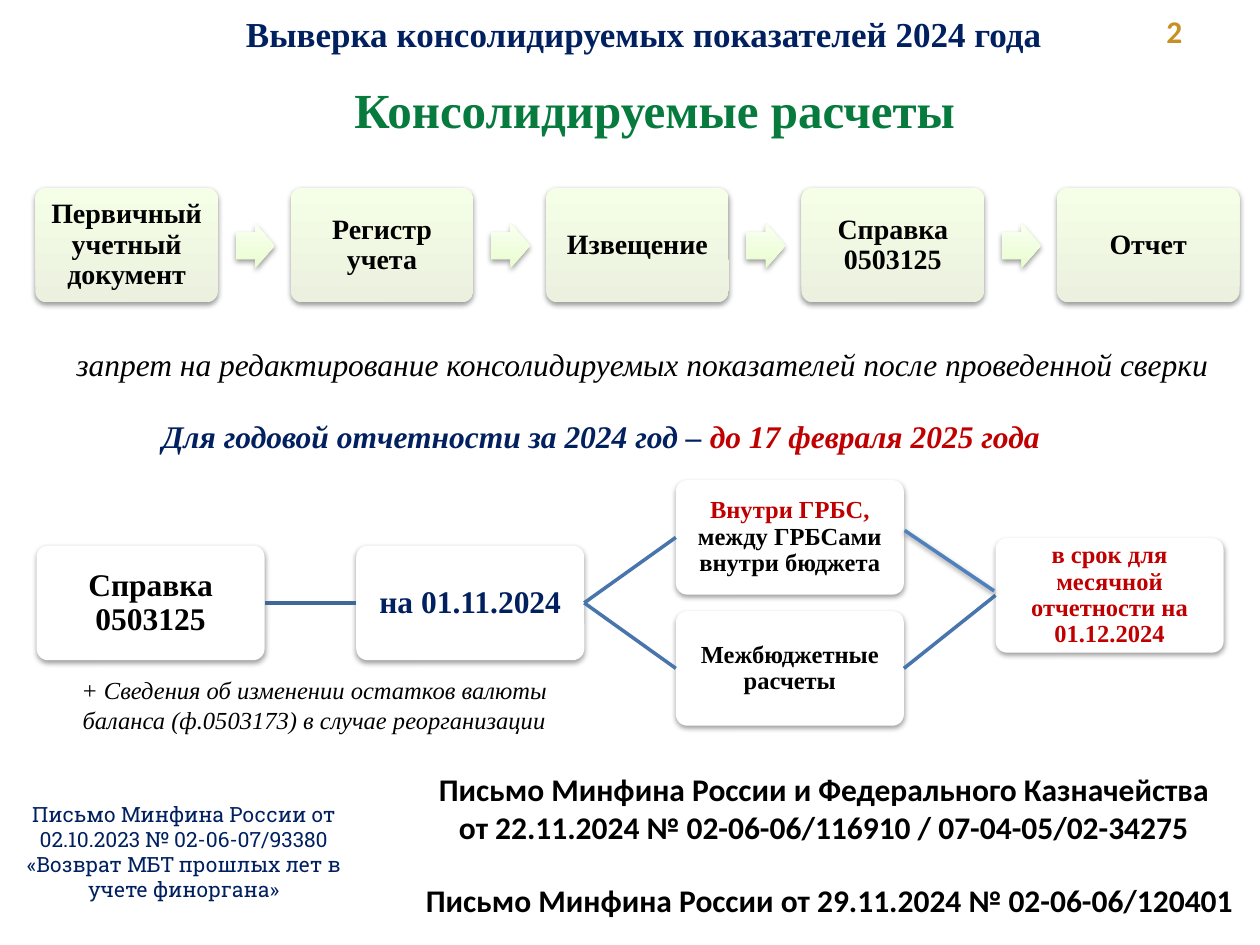
from dataclasses import dataclass

from lxml.etree import SubElement
from pptx import Presentation
from pptx.dml.color import RGBColor
from pptx.enum.shapes import MSO_CONNECTOR, MSO_SHAPE
from pptx.enum.text import MSO_ANCHOR, MSO_AUTO_SIZE, PP_ALIGN
from pptx.oxml.ns import qn
from pptx.util import Inches, Pt

COLS, ROWS = 100, 75
WIDTH, HEIGHT = Inches(10), Inches(7.5)
SERIF, SANS, SLAB = "Times New Roman", "Calibri", "Roboto Slab"
COLORS = {
    "black": "000000", "white": "FFFFFF", "navy": "002060", "red": "C00000",
    "green": "077A3E", "gold": "C79023",
    "step_low": "EBF1DE", "step_high": "F5FFE7",
    "arrow_low": "E9FDCF", "arrow_high": "F9FFF1",
    "link_dark": "3F6797", "link": "4875AC", "link_light": "4F81BD",
}


@dataclass(frozen=True)
class Run:
    text: str
    size: float
    color: str = "black"
    bold: bool = True
    italic: bool = False
    font: str = SERIF


@dataclass(frozen=True)
class Box:
    """A place in columns and rows of the slide grid."""
    x: float
    y: float
    w: float
    h: float

    @property
    def left_mid(self) -> tuple[float, float]:
        return self.x, self.y + self.h / 2

    @property
    def right_mid(self) -> tuple[float, float]:
        return self.x + self.w, self.y + self.h / 2


@dataclass(frozen=True)
class Caption:
    box: Box
    runs: tuple[Run, ...]
    align: PP_ALIGN = PP_ALIGN.CENTER


@dataclass(frozen=True)
class Link:
    start: tuple[float, float]
    end: tuple[float, float]
    color: str = "link"
    shadow: bool = False


def col(n: float) -> int:
    return round(WIDTH * n / COLS)


def row(n: float) -> int:
    return round(HEIGHT * n / ROWS)


def place(box: Box) -> tuple[int, int, int, int]:
    return col(box.x), row(box.y), col(box.w), row(box.h)


def rgb(name: str) -> RGBColor:
    return RGBColor.from_string(COLORS[name])


def write(tf, runs: tuple[Run, ...], align: PP_ALIGN = PP_ALIGN.CENTER):
    tf.word_wrap = True
    p = tf.paragraphs[0]
    p.alignment = align
    for item in runs:
        r = p.add_run()
        r.text = item.text
        f = r.font
        f.name, f.size, f.bold, f.italic = item.font, Pt(item.size), item.bold, item.italic
        f.color.rgb = rgb(item.color)
    return p


def add_effects(sp, shadow: bool) -> None:
    """Replace the theme effect by a soft shadow below, or by none."""
    effects = SubElement(sp._element.spPr, qn("a:effectLst"))
    if shadow:
        outer = SubElement(effects, qn("a:outerShdw"), blurRad="40000", dist="20000",
                           dir="5400000", rotWithShape="0")
        color = SubElement(outer, qn("a:srgbClr"), val=COLORS["black"])
        SubElement(color, qn("a:alpha"), val="38000")


def add_block(s, kind: MSO_SHAPE, box: Box, adjustments: tuple[float, ...],
              fill: tuple[str, ...]):
    """Add a shadowed shape; two fill colours make a gradient from bottom to top."""
    sp = s.shapes.add_shape(kind, *place(box))
    for i, value in enumerate(adjustments):
        sp.adjustments[i] = value
    if len(fill) == 1:
        sp.fill.solid()
        sp.fill.fore_color.rgb = rgb(fill[0])
    else:
        sp.fill.gradient()
        sp.fill.gradient_angle = 90
        for stop, name in zip(sp.fill.gradient_stops, fill):
            stop.color.rgb = rgb(name)
    sp.line.fill.background()
    add_effects(sp, True)
    return sp


def add_card(s, box: Box, runs: tuple[Run, ...], fill: tuple[str, ...], inset: float) -> None:
    tf = add_block(s, MSO_SHAPE.ROUNDED_RECTANGLE, box, (0.1,), fill).text_frame
    tf.margin_left = tf.margin_right = col(inset)
    tf.margin_top = tf.margin_bottom = row(inset)
    tf.vertical_anchor = MSO_ANCHOR.MIDDLE
    write(tf, runs).line_spacing = 0.9


def add_caption(s, caption: Caption) -> None:
    tf = s.shapes.add_textbox(*place(caption.box)).text_frame
    write(tf, caption.runs, caption.align)


def add_link(s, link: Link) -> None:
    (x1, y1), (x2, y2) = link.start, link.end
    line = s.shapes.add_connector(MSO_CONNECTOR.STRAIGHT, col(x1), row(y1), col(x2), row(y2))
    line.line.color.rgb = rgb(link.color)
    line.line.width = Pt(2)
    add_effects(line, link.shadow)


def set_title(s, box: Box, run: Run) -> None:
    title = s.shapes.title
    title.left, title.top, title.width, title.height = place(box)
    tf = title.text_frame
    tf.auto_size = MSO_AUTO_SIZE.NONE
    tf.vertical_anchor = MSO_ANCHOR.TOP
    write(tf, (run,))


STEPS = ("Первичный учетный документ", "Регистр учета", "Извещение", "Справка 0503125", "Отчет")
STEP_PITCH = 20.27


def add_steps(s) -> None:
    for i, text in enumerate(STEPS):
        x = 2.8 + i * STEP_PITCH
        add_card(s, Box(x, 14.9, 14.5, 9.1), (Run(text, 16),), ("step_low", "step_high"), 1)
        if i < len(STEPS) - 1:
            add_block(s, MSO_SHAPE.RIGHT_ARROW, Box(x + 15.9, 17.7, 3.1, 3.6), (0.6, 0.5),
                      ("arrow_low", "arrow_high"))


def tree_box(level: int, y: float) -> Box:
    return Box(2.9 + 25.37 * level, y, 18.1, 9.1)


FORM, DATE = tree_box(0, 43.3), tree_box(1, 43.3)
INSIDE, BETWEEN, DEADLINE = tree_box(2, 38.1), tree_box(2, 48.5), tree_box(3, 42.7)
TREE = (
    (FORM, (Run("Справка 0503125", 18),)),
    (DATE, (Run("на 01.11.2024", 18, "navy"),)),
    (INSIDE, (Run("Внутри ГРБС, ", 14, "red"), Run("между ГРБСами внутри бюджета", 14))),
    (BETWEEN, (Run("Межбюджетные расчеты", 14),)),
    (DEADLINE, (Run("в срок для месячной отчетности на 01.12.2024", 14, "red"),)),
)
LINKS = (
    Link(FORM.right_mid, DATE.left_mid, "link_dark"),
    Link(DATE.right_mid, INSIDE.left_mid),
    Link(DATE.right_mid, BETWEEN.left_mid),
    Link(BETWEEN.right_mid, DEADLINE.left_mid),
    Link((78.9, 46.9), (71.8, 42.1), "link_light", True),
)
CAPTIONS = (
    Caption(Box(91.6, 0.5, 6.6, 4), (Run("2", 18, "gold", font=SANS),), PP_ALIGN.LEFT),
    Caption(Box(22, 5.8, 59.9, 5.7), (Run("Консолидируемые расчеты", 28, "green"),)),
    Caption(Box(3.8, 26.9, 94.4, 4), (
        Run("запрет на редактирование консолидируемых показателей после проведенной сверки",
            18, bold=False, italic=True),)),
    Caption(Box(9, 32.6, 77.4, 4), (
        Run("Для годовой отчетности за 2024 год – ", 18, "navy", italic=True),
        Run("до 17 февраля 2025 года", 18, "red", italic=True))),
    Caption(Box(3.8, 53.1, 42.3, 5.7), (
        Run("+ Сведения об изменении остатков валюты баланса (ф.0503173) в случае реорганизации",
            14, bold=False, italic=True),)),
    Caption(Box(33.5, 60.6, 63.8, 7.1), (
        Run("Письмо Минфина России и Федерального Казначейства "
            "от 22.11.2024 № 02-06-06/116910 / 07-04-05/02-34275", 18, font=SANS),)),
    Caption(Box(32.3, 69.4, 67.1, 4), (
        Run("Письмо Минфина России от 29.11.2024 № 02-06-06/120401", 18, font=SANS),)),
    Caption(Box(0.8, 63.1, 27.6, 11.1), (
        Run("Письмо Минфина России от 02.10.2023 № 02-06-07/93380 "
            "«Возврат МБТ прошлых лет в учете финоргана»", 12, "navy", False, font=SLAB),)),
)


def main() -> None:
    prs = Presentation()
    prs.slide_width, prs.slide_height = WIDTH, HEIGHT
    s = prs.slides.add_slide(prs.slide_layouts[5])
    set_title(s, Box(16.6, 0.5, 69, 4.4),
              Run("Выверка консолидируемых показателей 2024 года", 20, "navy"))
    add_steps(s)
    for box, runs in TREE:
        add_card(s, box, runs, ("white",), 0.4)
    for link in LINKS:
        add_link(s, link)
    for caption in CAPTIONS:
        add_caption(s, caption)
    prs.save("out.pptx")


if __name__ == "__main__":
    main()
